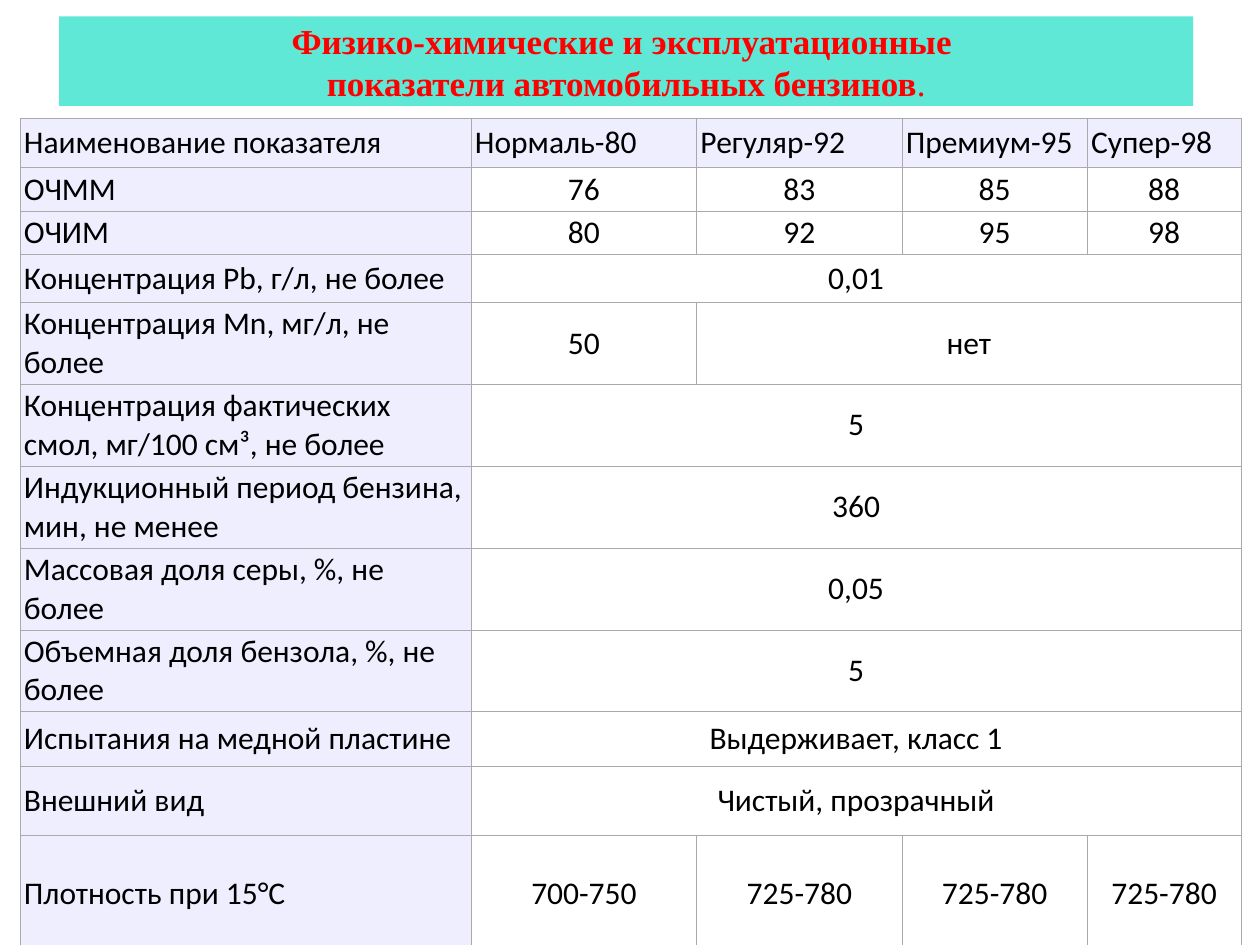
from dataclasses import dataclass
from typing import Any

from lxml import etree
from pptx import Presentation
from pptx import util as u
from pptx.dml.color import RGBColor
from pptx.enum import text
from pptx.oxml.ns import qn

COLORS = {
    "title_fill": "5FE8D6",
    "title_text": "FF0000",
    "label_fill": "EEEEFF",
    "value_fill": "FFFFFF",
    "cell_text": "000000",
    "border": "AAAAAA",
}
GRID = 100
COLUMNS = (35.8, 17.9, 16.3, 14.7, 12.2)
TITLE_FONT = {"name": "Times New Roman", "size": u.Pt(20)}
CELL_FONT = {"name": "Calibri", "size": u.Pt(18), "bold": False}
CELL_FORMAT = {
    "vertical_anchor": text.MSO_ANCHOR.MIDDLE,
    "margin_left": u.Inches(0.03),
    "margin_right": u.Inches(0.03),
    "margin_top": u.Inches(0.02),
    "margin_bottom": u.Inches(0.02),
}


@dataclass
class Row:
    label: str
    values: tuple[str, ...]
    height: float
    header: bool = False


ROWS = [
    Row("Наименование показателя",
        ("Нормаль-80", "Регуляр-92", "Премиум-95", "Супер-98"), 3.9, True),
    Row("ОЧММ", ("76", "83", "85", "88"), 3.4),
    Row("ОЧИМ", ("80", "92", "95", "98"), 3.4),
    Row("Концентрация Pb, г/л, не более", ("0,01",), 3.8),
    Row("Концентрация Mn, мг/л, не более", ("50", "нет"), 6.4),
    Row("Концентрация фактических смол, мг/100 см³, не более", ("5",), 6.4),
    Row("Индукционный период бензина, мин, не менее", ("360",), 6.4),
    Row("Массовая доля серы, %, не более", ("0,05",), 6.4),
    Row("Объемная доля бензола, %, не более", ("5",), 6.4),
    Row("Испытания на медной пластине", ("Выдерживает, класс 1",), 4.3),
    Row("Внешний вид", ("Чистый, прозрачный",), 5.5),
    Row("Плотность при 15°C", ("700-750", "725-780", "725-780", "725-780"), 9.3),
]

prs = Presentation()
prs.slide_width, prs.slide_height = u.Inches(10), u.Inches(7.5)


def grid(units: float) -> int:
    return round(prs.slide_width * units / GRID)


def apply(obj: Any, values: dict[str, Any]) -> None:
    for name, value in values.items():
        setattr(obj, name, value)


def rgb(key: str) -> RGBColor:
    return RGBColor.from_string(COLORS[key])


def add_borders(cell: Any) -> None:
    tc_pr = cell._tc.get_or_add_tcPr()
    for i, side in enumerate(("lnL", "lnR", "lnT", "lnB")):
        ln = etree.Element(qn(f"a:{side}"), w=str(u.Pt(0.6)))
        fill = etree.SubElement(ln, qn("a:solidFill"))
        etree.SubElement(fill, qn("a:srgbClr"), val=COLORS["border"])
        tc_pr.insert(i, ln)


def write_cell(cell: Any, content: str, fill: str, align: Any) -> None:
    apply(cell, CELL_FORMAT)
    p = cell.text_frame.paragraphs[0]
    p.alignment = align
    r = p.add_run()
    r.text = content
    apply(r.font, CELL_FONT)
    r.font.color.rgb = rgb("cell_text")


def write_row(tbl: Any, index: int, row: Row) -> None:
    tbl.rows[index].height = grid(row.height)
    for col in range(len(COLUMNS)):
        cell = tbl.cell(index, col)
        cell.fill.solid()
        shaded = row.header or col == 0
        cell.fill.fore_color.rgb = rgb("label_fill" if shaded else "value_fill")
        add_borders(cell)
    last = len(row.values)
    if last < len(COLUMNS) - 1:
        tbl.cell(index, last).merge(tbl.cell(index, len(COLUMNS) - 1))
    for col, content in enumerate((row.label, *row.values)):
        left = row.header or col == 0
        align = text.PP_ALIGN.LEFT if left else text.PP_ALIGN.CENTER
        write_cell(tbl.cell(index, col), content, "value_fill", align)


def write_title(sp: Any) -> None:
    apply(sp, {"left": grid(4.7), "top": grid(1.3),
               "width": grid(90), "height": grid(7.1)})
    sp.fill.solid()
    sp.fill.fore_color.rgb = rgb("title_fill")
    tf = sp.text_frame
    apply(tf, {"word_wrap": True, "auto_size": text.MSO_AUTO_SIZE.NONE,
               "vertical_anchor": text.MSO_ANCHOR.MIDDLE})
    p = tf.paragraphs[0]
    p.alignment = text.PP_ALIGN.CENTER
    for content, bold in (
        ("Физико-химические и эксплуатационные \vпоказатели автомобильных бензинов", True),
        (".", False),
    ):
        for i, line in enumerate(content.split("\v")):
            if i:
                p.add_line_break()
            r = p.add_run()
            r.text = line
            apply(r.font, {**TITLE_FONT, "bold": bold})
            r.font.color.rgb = rgb("title_text")


def main() -> None:
    s = prs.slides.add_slide(prs.slide_layouts[5])
    write_title(s.shapes.title)
    tbl = s.shapes.add_table(
        len(ROWS), len(COLUMNS), grid(1.6), grid(9.4),
        grid(sum(COLUMNS)), grid(sum(row.height for row in ROWS)),
    ).table
    apply(tbl, {"first_row": False, "horz_banding": False})
    for column, width in zip(tbl.columns, COLUMNS):
        column.width = grid(width)
    for i, row in enumerate(ROWS):
        write_row(tbl, i, row)
    prs.save("out.pptx")


if __name__ == "__main__":
    main()
